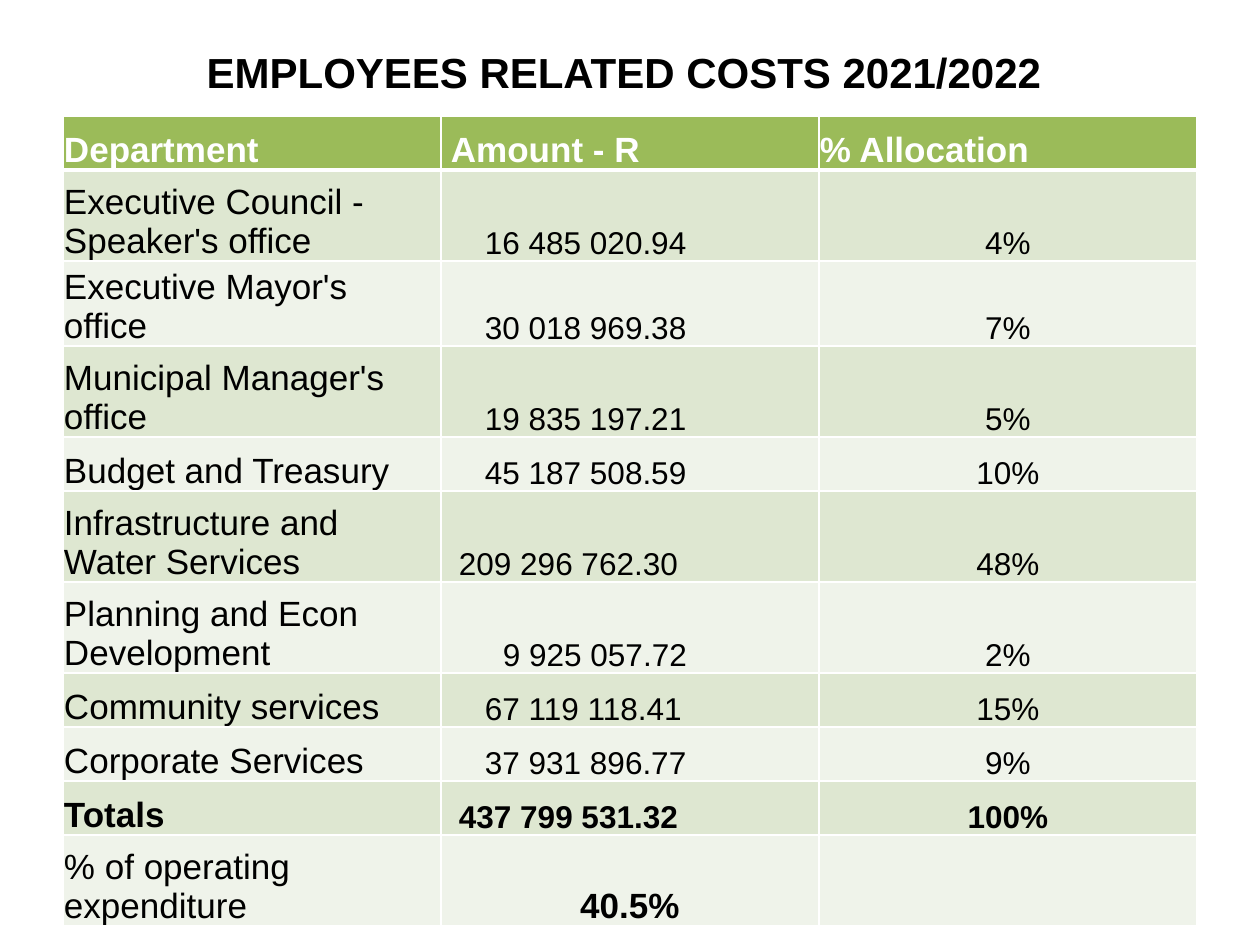
"""Build a slide with a table of employee costs by department."""
from typing import Any, NamedTuple

from lxml import etree
from pptx import Presentation
from pptx.dml.color import RGBColor
from pptx.enum.text import MSO_ANCHOR, PP_ALIGN
from pptx.oxml.ns import qn
from pptx.util import Pt

LEFT, CENTER = PP_ALIGN.LEFT, PP_ALIGN.CENTER
MIDDLE, BOTTOM = MSO_ANCHOR.MIDDLE, MSO_ANCHOR.BOTTOM
EMU_PER_PX = 914400 // 126
FONT = "Arial"
COLORS = {
    "black": "000000",
    "white": "FFFFFF",
    "header": "9BBB59",
    "odd": "DEE7D1",
    "even": "EFF3EA",
}
SHORT, TALL = 54, 91
COLUMN_WIDTH = 378


class CostRow(NamedTuple):
    """Texts and format of one table row."""

    department: str
    amount: str
    share: str
    height: int = SHORT
    indent: int = 44
    bold: bool = False


HEADER = CostRow("Department", "Amount - R", "% Allocation", indent=9, bold=True)
COSTS = [
    CostRow("Executive Council - Speaker's office", "16 485 020.94", "4%", TALL),
    CostRow("Executive Mayor's office", "30 018 969.38", "7%"),
    CostRow("Municipal Manager's office", "19 835 197.21", "5%", TALL),
    CostRow("Budget and Treasury", "45 187 508.59", "10%"),
    CostRow("Infrastructure and Water Services", "209 296 762.30", "48%", TALL, 18),
    CostRow("Planning and Econ Development", "9 925 057.72", "2%", TALL, 62),
    CostRow("Community services", "67 119 118.41", "15%"),
    CostRow("Corporate Services", "37 931 896.77", "9%"),
    CostRow("Totals", "437 799 531.32", "100%", indent=18, bold=True),
]
OPERATING = CostRow("% of operating expenditure", "40.5%", "", TALL)


def px(length: int) -> int:
    """Turn px into EMU."""
    return length * EMU_PER_PX


def write(frame: Any, text: str, *, size: int = 20, bold: bool = False,
          color: str = "black", align: Any = LEFT, indent: int = 0) -> None:
    """Write one formatted paragraph into a text frame."""
    paragraph = frame.paragraphs[0]
    paragraph.alignment = align
    properties = paragraph._p.get_or_add_pPr()
    properties.set("marL", str(px(indent)))
    properties.set("indent", "0")
    run = paragraph.add_run()
    run.text = text
    run.font.name = FONT
    run.font.size = Pt(size)
    run.font.bold = bold
    run.font.color.rgb = RGBColor.from_string(COLORS[color])


def style_cell(cell: Any, fill: str, margin: int, top: int, bottom: int) -> None:
    """Give a cell its margins, white borders and fill."""
    cell.vertical_anchor = BOTTOM
    cell.margin_left = cell.margin_right = cell.margin_top = px(margin)
    cell.margin_bottom = 0
    properties = cell._tc.get_or_add_tcPr()
    for side, width in (("L", 1), ("R", 1), ("T", top), ("B", bottom)):
        line = etree.SubElement(properties, qn(f"a:ln{side}"), w=str(Pt(width)))
        solid = etree.SubElement(line, qn("a:solidFill"))
        etree.SubElement(solid, qn("a:srgbClr"), val=COLORS["white"])
    cell.fill.solid()
    cell.fill.fore_color.rgb = RGBColor.from_string(COLORS[fill])


def cell_formats(row: CostRow) -> list[dict[str, Any]]:
    """Return the text format of each cell in a row."""
    if row is HEADER:
        heading = {"bold": True, "color": "white"}
        return [heading, {**heading, "indent": row.indent}, heading]
    if row is OPERATING:
        return [{}, {"bold": True, "align": CENTER}, {}]
    figure = {"size": 18, "bold": row.bold}
    return [{"bold": row.bold}, {**figure, "indent": row.indent},
            {**figure, "align": CENTER}]


def add_title(slide: Any, text: str) -> None:
    """Add the centred slide title."""
    shape = slide.shapes.add_textbox(px(63), px(38), px(1134), px(67))
    shape.text_frame.word_wrap = True
    shape.text_frame.vertical_anchor = MIDDLE
    write(shape.text_frame, text, size=24, bold=True, align=CENTER)


def add_cost_table(slide: Any, rows: list[CostRow]) -> None:
    """Add the table with one line for each cost row."""
    height = sum(row.height for row in rows)
    table = slide.shapes.add_table(
        len(rows), 3, px(63), px(116), px(3 * COLUMN_WIDTH), px(height)).table
    for column in table.columns:
        column.width = px(COLUMN_WIDTH)
    for number, row in enumerate(rows):
        table.rows[number].height = px(row.height)
        fill = "header" if row is HEADER else ("even", "odd")[number % 2]
        top = 3 if number == 1 else 1
        bottom = 3 if row is HEADER else 1
        texts = (row.department, row.amount, row.share)
        for index, (text, style) in enumerate(zip(texts, cell_formats(row))):
            cell = table.cell(number, index)
            margin = 1 if index == 0 or row in (HEADER, OPERATING) else 0
            style_cell(cell, fill, margin, top, bottom)
            if text:
                write(cell.text_frame, text, **style)


def main() -> None:
    """Build and save the presentation."""
    presentation = Presentation()
    presentation.slide_width, presentation.slide_height = px(1260), px(945)
    slide = presentation.slides.add_slide(presentation.slide_layouts[6])
    add_title(slide, "EMPLOYEES RELATED COSTS 2021/2022 ")
    add_cost_table(slide, [HEADER, *COSTS, OPERATING])
    presentation.save("out.pptx")


if __name__ == "__main__":
    main()
